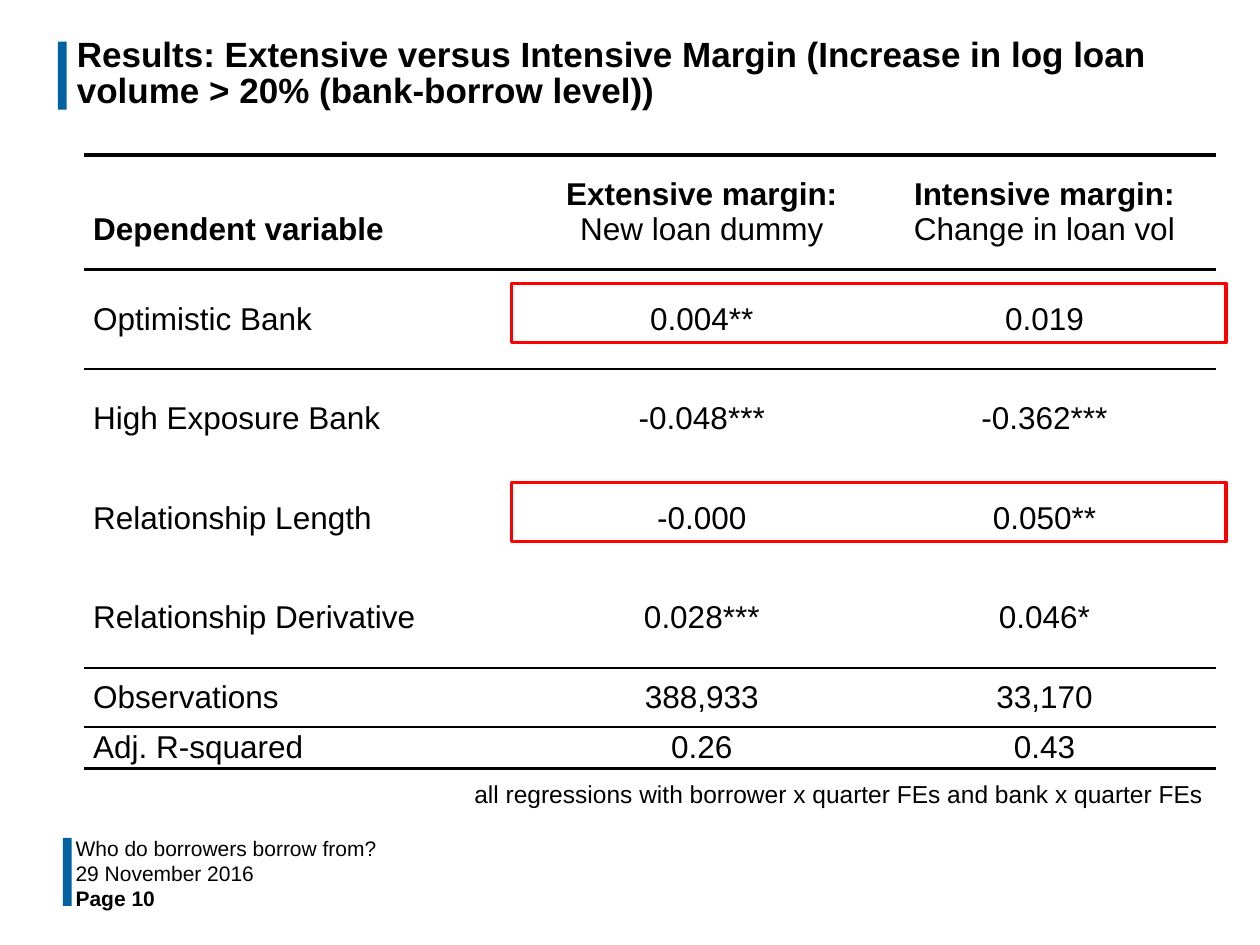
"""Build the results slide on the extensive versus intensive loan margin."""
from lxml.etree import SubElement
from pptx import Presentation
from pptx.dml.color import RGBColor
from pptx.enum.shapes import MSO_SHAPE as Shape
from pptx.enum.text import MSO_ANCHOR as Anchor, MSO_AUTO_SIZE as AutoSize, PP_ALIGN as Align
from pptx.oxml.ns import qn
from pptx.util import Inches, Pt

COLORS = {"text": "000000", "accent": "0062A1", "highlight": "FF0000"}
NO_STYLE = "{2D5ABB26-0587-4C30-8999-92F81FD0307C}"


def add_text(paragraph, text, size, bold=False, align=Align.LEFT):
    paragraph.alignment = align
    run = paragraph.add_run()
    run.text = text
    run.font.name = "Arial"
    run.font.size = Pt(size)
    run.font.bold = bold
    run.font.color.rgb = RGBColor.from_string(COLORS["text"])


def add_border(cell, side, width):
    line = SubElement(cell._tc.get_or_add_tcPr(), qn(f"a:{side}"), w=str(Pt(width)))
    if width:
        fill = SubElement(line, qn("a:solidFill"))
        SubElement(fill, qn("a:srgbClr"), val=COLORS["text"])
    else:
        SubElement(line, qn("a:noFill"))


prs = Presentation()
prs.slide_width, prs.slide_height = Inches(10), Inches(7.5)
slide = prs.slides.add_slide(prs.slide_layouts[5])
shapes = slide.shapes

title = shapes.title
title.left, title.top = Inches(0.51), Inches(0.28)
title.width, title.height = Inches(9.29), Inches(0.63)
title.text_frame.auto_size = AutoSize.NONE
title.text_frame.word_wrap = True
title.text_frame.vertical_anchor = Anchor.MIDDLE
heading = title.text_frame.paragraphs[0]
heading.line_spacing = Pt(20.4)
add_text(heading, "Results: Extensive versus Intensive Margin (Increase in log loan "
         "volume > 20% (bank-borrow level))", 20, True)

for left, top in [(0.46, 0.33), (0.5, 6.65)]:
    bar = shapes.add_shape(Shape.RECTANGLE, Inches(left), Inches(top), Inches(0.07), Inches(0.54))
    bar.shadow.inherit = False
    bar.fill.solid()
    bar.fill.fore_color.rgb = RGBColor.from_string(COLORS["accent"])
    bar.line.fill.background()

footer_lines = [
    ("Who do borrowers borrow from?", 6.64, 8.88, False),
    ("29 November 2016", 6.84, 2.31, False),
    ("Page 10", 7.04, 2.31, True),
]
for text, top, width, bold in footer_lines:
    footer = shapes.add_textbox(Inches(0.51), Inches(top), Inches(width), Inches(0.18)).text_frame
    footer.word_wrap = True
    footer.vertical_anchor = Anchor.MIDDLE
    footer.margin_left = footer.margin_right = Inches(0.09)
    footer.margin_top = footer.margin_bottom = Inches(0.04)
    add_text(footer.paragraphs[0], text, 12, bold)

results = [
    (["Dependent variable"], ["Extensive margin:", "New loan dummy"],
     ["Intensive margin:", "Change in loan vol"]),
    (["Optimistic Bank"], ["0.004**"], ["0.019"]),
    (["High Exposure Bank"], ["-0.048***"], ["-0.362***"]),
    (["Relationship Length"], ["-0.000"], ["0.050**"]),
    (["Relationship Derivative"], ["0.028***"], ["0.046*"]),
    (["Observations"], ["388,933"], ["33,170"]),
    (["Adj. R-squared"], ["0.26"], ["0.43"]),
]
row_heights = [0.91, 0.79, 0.79, 0.79, 0.79, 0.47, 0.33]
rules = [2.25, 1.5, 1.5, 0, 0, 1.5, 1.5, 2.25]
table = shapes.add_table(len(results), 3, Inches(0.67), Inches(1.23),
                         Inches(8.98), Inches(4.86)).table
table.first_row = table.horz_banding = False
table._tbl.tblPr.find(qn("a:tableStyleId")).text = NO_STYLE
for column, width in zip(table.columns, [3.54, 2.72, 2.72]):
    column.width = Inches(width)
for r, (entries, height) in enumerate(zip(results, row_heights)):
    table.rows[r].height = Inches(height)
    for c, lines in enumerate(entries):
        cell = table.cell(r, c)
        cell.vertical_anchor = Anchor.MIDDLE
        cell.margin_left = cell.margin_right = Inches(0.07 if c == 0 or r == 0 else 0.05)
        cell.margin_top = Inches(0.28 if c == 0 and r == 0 else 0)
        cell.margin_bottom = 0
        for side, rule in [("lnL", 0), ("lnR", 0), ("lnT", rules[r]), ("lnB", rules[r + 1])]:
            add_border(cell, side, rule)
        cell.fill.background()
        for i, text in enumerate(lines):
            paragraph = cell.text_frame.add_paragraph() if i else cell.text_frame.paragraphs[0]
            add_text(paragraph, text, 18, r == 0 and i == 0, Align.CENTER if c else Align.LEFT)

note = shapes.add_textbox(Inches(1.3), Inches(6.13), Inches(8.35), Inches(0.34)).text_frame
note.word_wrap = True
note.auto_size = AutoSize.SHAPE_TO_FIT_TEXT
add_text(note.paragraphs[0],
         "all regressions with borrower x quarter FEs and bank x quarter FEs", 14, align=Align.RIGHT)

for top in [2.25, 3.83]:
    frame = shapes.add_shape(Shape.RECTANGLE, Inches(4.06), Inches(top), Inches(5.67), Inches(0.47))
    frame.shadow.inherit = False
    frame.fill.background()
    frame.line.color.rgb = RGBColor.from_string(COLORS["highlight"])
    frame.line.width = Pt(2)

prs.save("out.pptx")
